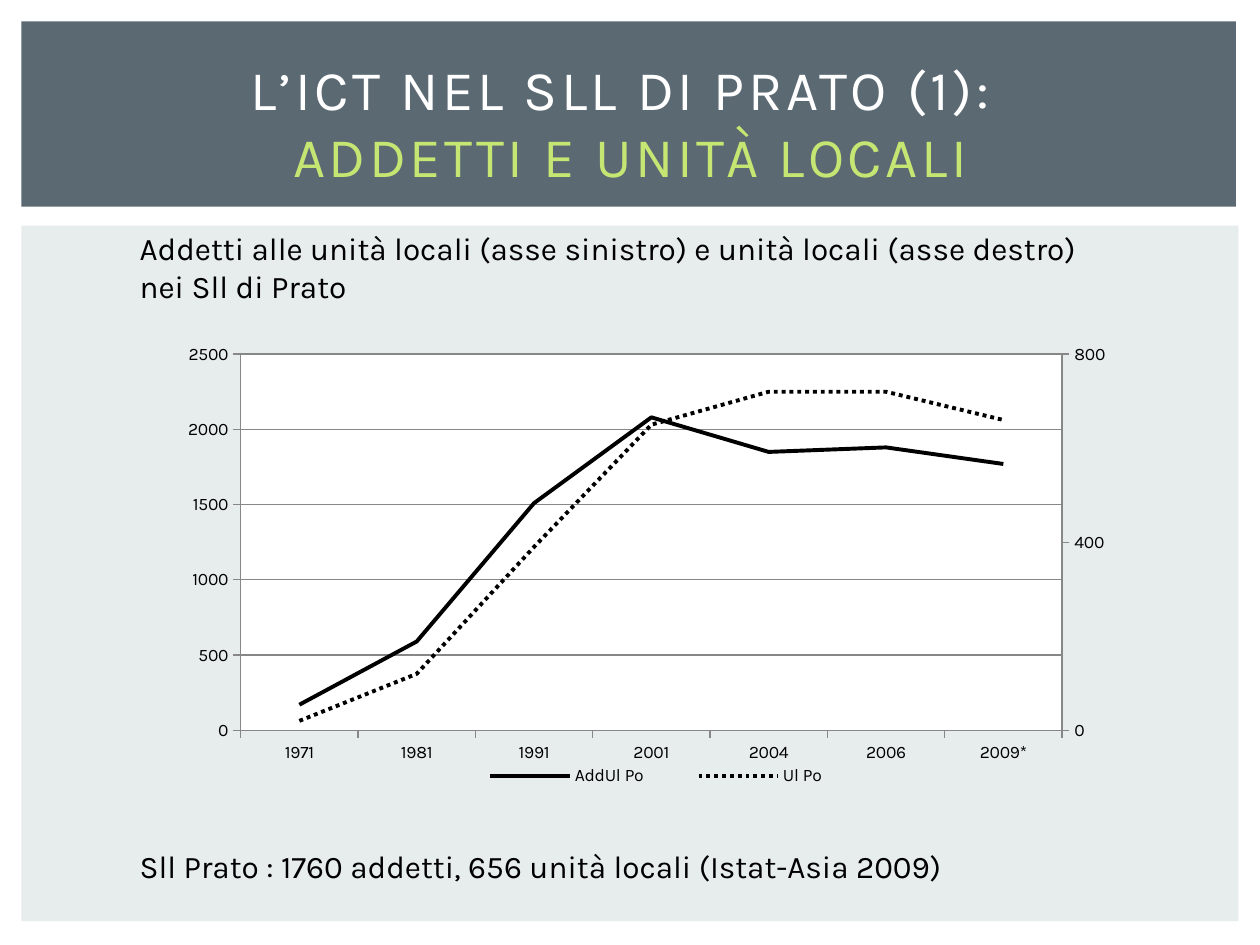
from copy import deepcopy

from lxml import etree
from pptx import Presentation
from pptx.chart.data import CategoryChartData
from pptx.dml.color import RGBColor
from pptx.enum.chart import XL_CHART_TYPE, XL_LEGEND_POSITION, XL_TICK_MARK
from pptx.enum.dml import MSO_LINE
from pptx.enum.shapes import MSO_SHAPE
from pptx.enum.text import MSO_ANCHOR, PP_ALIGN
from pptx.oxml import parse_xml
from pptx.oxml.ns import qn
from pptx.util import Inches, Pt

LINE_CHART = XL_CHART_TYPE.LINE
LEGEND_BOTTOM = XL_LEGEND_POSITION.BOTTOM
TICK_OUTSIDE = XL_TICK_MARK.OUTSIDE
SOLID, DOTTED = MSO_LINE.SOLID, MSO_LINE.ROUND_DOT
RECTANGLE = MSO_SHAPE.RECTANGLE
TOP, MIDDLE = MSO_ANCHOR.TOP, MSO_ANCHOR.MIDDLE
LEFT, CENTER = PP_ALIGN.LEFT, PP_ALIGN.CENTER

FONT = "Karla"
BLACK, WHITE, GREEN = "000000", "FFFFFF", "C5E672"
SLATE, PALE, GRID = "5B6973", "E7ECED", "878787"
CHART_NS = "http://schemas.openxmlformats.org/drawingml/2006/chart"

YEARS = ["1971", "1981", "1991", "2001", "2004", "2006", "2009*"]
SERIES = {
    "AddUl Po": [170, 590, 1510, 2080, 1850, 1880, 1770],
    "Ul Po": [20, 120, 390, 650, 720, 720, 660],
}


def color(hex_value):
    return RGBColor.from_string(hex_value)


def set_attributes(target, values):
    for name, value in values.items():
        setattr(target, name, value)


def set_font(font, size, hex_value):
    set_attributes(font, {"name": FONT, "size": Pt(size)})
    font.color.rgb = color(hex_value)


def add_panel(slide, box, hex_value):
    shape = slide.shapes.add_shape(RECTANGLE, *map(Inches, box))
    shape.shadow.inherit = False
    shape.fill.solid()
    shape.fill.fore_color.rgb = color(hex_value)
    shape.line.fill.background()


def add_text(slide, box, paragraphs, size, alignment=LEFT, anchor=TOP, spacing=0):
    frame = slide.shapes.add_textbox(*map(Inches, box)).text_frame
    set_attributes(frame, {"word_wrap": True, "vertical_anchor": anchor})
    for index, runs in enumerate(paragraphs):
        paragraph = frame.add_paragraph() if index else frame.paragraphs[0]
        paragraph.alignment = alignment
        for position, (text, hex_value) in enumerate(runs):
            if position:
                paragraph.add_line_break()
            run = paragraph.add_run()
            run.text = text
            set_font(run.font, size, hex_value)
            if spacing:
                run.font._element.set("spc", str(spacing * 100))


def set_layout(element, index, bounds, inner=False):
    for layout in element.findall(qn("c:layout")):
        element.remove(layout)
    target = '<c:layoutTarget val="inner"/>' if inner else ""
    modes = "".join(f'<c:{axis}Mode val="edge"/>' for axis in "xy")
    sizes = "".join(f'<c:{key} val="{value}"/>' for key, value in zip("xywh", bounds))
    element.insert(index, parse_xml(
        f'<c:layout xmlns:c="{CHART_NS}"><c:manualLayout>'
        f"{target}{modes}{sizes}</c:manualLayout></c:layout>"))


def style_axis(axis):
    set_attributes(axis, {"major_tick_mark": TICK_OUTSIDE})
    axis.format.line.color.rgb = color(GRID)
    set_font(axis.tick_labels.font, 10, BLACK)


def move_to_right_axis(plot_area):
    left_plot = plot_area.find(qn("c:lineChart"))
    right_plot = deepcopy(left_plot)
    left_plot.remove(left_plot.findall(qn("c:ser"))[1])
    right_plot.remove(right_plot.findall(qn("c:ser"))[0])
    left_plot.addnext(right_plot)

    category_axis = plot_area.find(qn("c:catAx"))
    value_axis = plot_area.find(qn("c:valAx"))
    right_category, right_value = deepcopy(category_axis), deepcopy(value_axis)
    value_axis.addnext(right_value)
    right_value.addnext(right_category)

    new_ids = {
        axis.find(qn("c:axId")).get("val"): new_id
        for axis, new_id in ((category_axis, "5001"), (value_axis, "5002"))
    }
    for part in (right_plot, right_category, right_value):
        for tag in ("c:axId", "c:crossAx"):
            for reference in part.findall(qn(tag)):
                reference.set("val", new_ids[reference.get("val")])

    right_category.find(qn("c:delete")).set("val", "1")
    right_value.remove(right_value.find(qn("c:majorGridlines")))
    right_value.find(qn("c:axPos")).set("val", "r")
    right_value.find(qn("c:crosses")).set("val", "max")
    right_value.find(qn("c:majorUnit")).set("val", "400")
    right_value.find(qn("c:scaling")).find(qn("c:max")).set("val", "800")


def fill_plot_area(plot_area, hex_value):
    properties = etree.SubElement(plot_area, qn("c:spPr"))
    fill = etree.SubElement(properties, qn("a:solidFill"))
    etree.SubElement(fill, qn("a:srgbClr"), val=hex_value)


def add_line_chart(slide, box):
    data = CategoryChartData()
    data.categories = YEARS
    for name, values in SERIES.items():
        data.add_series(name, values)
    chart = slide.shapes.add_chart(LINE_CHART, *map(Inches, box), data).chart
    set_attributes(chart, {"has_title": False, "has_legend": True})
    set_font(chart.font, 10, BLACK)
    set_attributes(chart.legend, {"position": LEGEND_BOTTOM, "include_in_layout": False})
    set_font(chart.legend.font, 10, BLACK)
    set_layout(chart.legend._element, 1, (0.28, 0.89, 0.45, 0.07))

    for series, dash in zip(chart.plots[0].series, (SOLID, DOTTED)):
        series.smooth = False
        set_attributes(series.format.line, {"width": Pt(2.25), "dash_style": dash})
        series.format.line.color.rgb = color(BLACK)

    style_axis(chart.category_axis)
    style_axis(chart.value_axis)
    set_attributes(chart.value_axis, {
        "minimum_scale": 0, "maximum_scale": 2500, "major_unit": 500,
        "has_major_gridlines": True})
    chart.value_axis.major_gridlines.format.line.color.rgb = color(GRID)

    plot_area = chart._chartSpace.chart.plotArea
    move_to_right_axis(plot_area)
    set_layout(plot_area, 0, (0.07, 0.04, 0.86, 0.79), inner=True)
    fill_plot_area(plot_area, WHITE)


def main():
    presentation = Presentation()
    set_attributes(presentation, {"slide_width": Inches(10), "slide_height": Inches(7.5)})
    slide = presentation.slides.add_slide(presentation.slide_layouts[6])

    add_panel(slide, (0.17, 1.79, 9.66, 5.52), PALE)
    add_panel(slide, (0.17, 0.17, 9.64, 1.47), SLATE)
    add_text(slide, (0.42, 0.39, 9.17, 1.15),
             [[("L’ICT NEL SLL DI PRATO (1): ", WHITE), ("ADDETTI E UNITÀ LOCALI", GREEN)]],
             32, CENTER, MIDDLE, spacing=2)
    add_text(slide, (1.01, 1.77, 8.14, 0.71),
             [[("Addetti alle unità locali (asse sinistro) e unità locali (asse destro)", BLACK)],
              [("nei Sll di Prato", BLACK)]], 18)
    add_text(slide, (1.01, 6.67, 7.94, 0.71),
             [[("Sll Prato : 1760 addetti, 656 unità locali (Istat-Asia 2009)", BLACK)]], 18)
    add_line_chart(slide, (1.38, 2.66, 7.58, 3.78))
    presentation.save("out.pptx")


if __name__ == "__main__":
    main()
